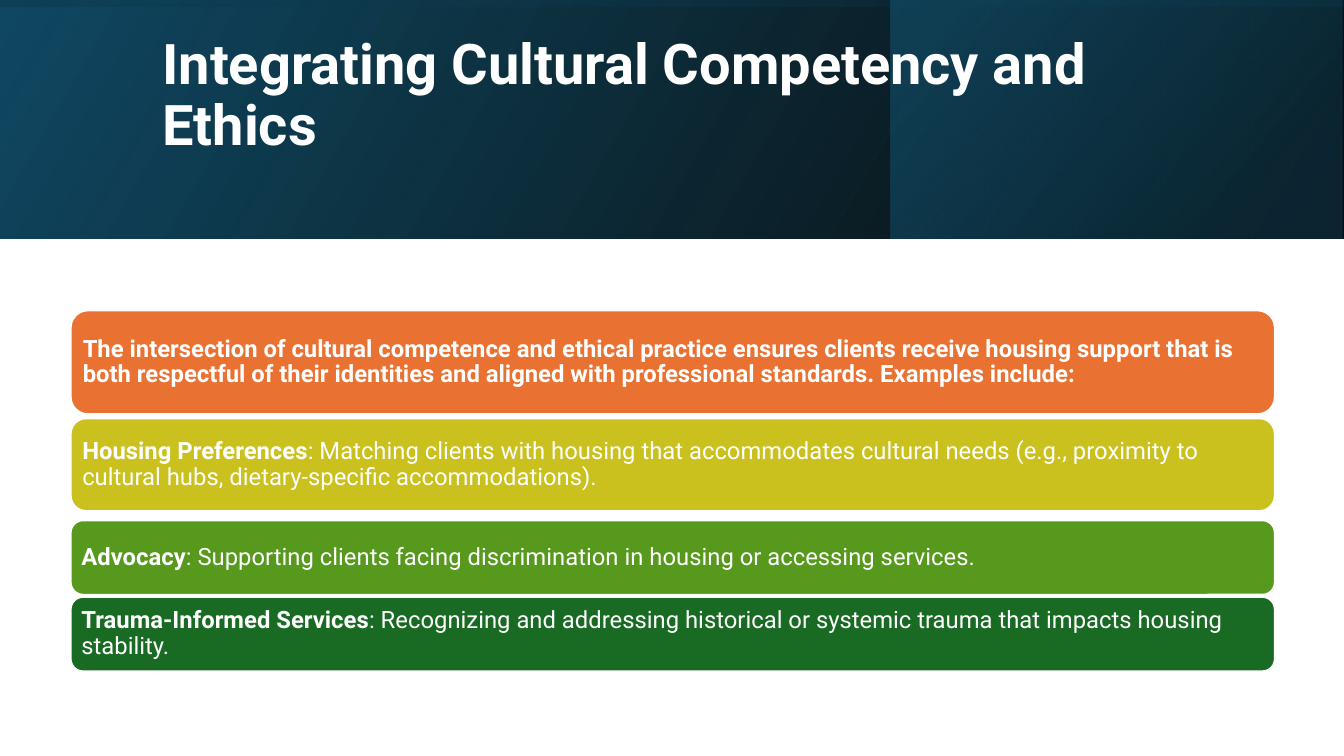
import pptx
import pptx.util
import pptx.dml.color
import pptx.enum.shapes
import pptx.enum.text
import pptx.oxml
import pptx.oxml.ns

COLOURS = {
    "white": "FFFFFF", "black": "000000", "navy": "104862",
    "deep": "0B3041", "teal": "156082", "orange": "E97132",
    "yellow": "CBC11E", "green": "56991D", "forest": "196B24",
}
WIDTH, HEIGHT, BANNER = 33.87, 19.05, 6.02
Cm = pptx.util.Cm


def rgb(name):
    return pptx.dml.color.RGBColor.from_string(COLOURS[name])


class SlideBuilder:
    """Style of the deck and the slide being built."""
    font = "Roboto"
    line_spacing = 0.9

    def __init__(self, deck):
        self.slide = deck.slides.add_slide(deck.slide_layouts[5])

    def shape(self, kind, left, top, width, height):
        shape = self.slide.shapes.add_shape(
            kind, Cm(left), Cm(top), Cm(width), Cm(height))
        shape.shadow.inherit = False
        return shape

    def add_text(self, frame, runs, size):
        frame.word_wrap = True
        para = frame.paragraphs[0]
        para.alignment = pptx.enum.text.PP_ALIGN.LEFT
        para.line_spacing = self.line_spacing
        for text, bold in runs:
            span = para.add_run()
            span.text = text
            span.font.name = self.font
            span.font.size = pptx.util.Pt(size)
            span.font.bold = bold
            span.font.color.rgb = rgb("white")

    def gradient_panel(self, left, top, width, height, angle, stops, rotation=0):
        panel = self.shape(pptx.enum.shapes.MSO_SHAPE.RECTANGLE,
                           left, top, width, height)
        panel.rotation = rotation
        panel.line.fill.background()
        properties = panel._element.spPr
        properties.xfrm.set("flipH", "1")
        # Transparent gradient stops: position, colour, opacity in percent
        stop_xml = "".join(
            f'<a:gs pos="{position * 1000}"><a:srgbClr val="{COLOURS[colour]}">'
            f'<a:alpha val="{opacity * 1000}"/></a:srgbClr></a:gs>'
            for position, colour, opacity in stops)
        gradient = pptx.oxml.parse_xml(
            f'<a:gradFill {pptx.oxml.ns.nsdecls("a")} rotWithShape="1">'
            f'<a:gsLst>{stop_xml}</a:gsLst>'
            f'<a:lin ang="{angle * 60000}" scaled="0"/></a:gradFill>')
        properties.find(pptx.oxml.ns.qn("a:prstGeom")).addnext(gradient)

    def title(self, text, left, top, width, height):
        box = self.slide.shapes.title
        box.left, box.top, box.width, box.height = map(
            Cm, (left, top, width, height))
        frame = box.text_frame
        frame.vertical_anchor = pptx.enum.text.MSO_ANCHOR.TOP
        frame.auto_size = pptx.enum.text.MSO_AUTO_SIZE.NONE
        frame.margin_top = 0
        self.add_text(frame, [(text, True)], 40)
        # Bring the title in front of the banner
        self.slide.shapes._spTree.append(box._element)

    def card(self, top, height, colour, runs):
        box = self.shape(pptx.enum.shapes.MSO_SHAPE.ROUNDED_RECTANGLE,
                         1.78, top, 30.35, height)
        box.fill.solid()
        box.fill.fore_color.rgb = rgb(colour)
        box.line.color.rgb = rgb("white")
        box.line.width = pptx.util.Pt(1.5)
        frame = box.text_frame
        frame.vertical_anchor = pptx.enum.text.MSO_ANCHOR.MIDDLE
        frame.margin_left = frame.margin_right = Cm(0.18)
        frame.margin_top = frame.margin_bottom = Cm(0.18)
        self.add_text(frame, runs, 17)


def main():
    deck = pptx.Presentation()
    deck.slide_width, deck.slide_height = Cm(WIDTH), Cm(HEIGHT)
    builder = SlideBuilder(deck)

    # Banner
    builder.gradient_panel(0, 0, WIDTH, BANNER, 330,
                           [(0, "black", 96), (100, "navy", 100)])
    builder.gradient_panel(22.45, 0, 11.39, BANNER, 320,
                           [(19, "deep", 68), (100, "teal", 48)])
    offset = (WIDTH - BANNER) / 2
    builder.gradient_panel(offset, -offset, BANNER, WIDTH, 350,
                           [(23, "navy", 16), (99, "black", 45)], rotation=270)
    builder.title("Integrating Cultural Competency and Ethics",
                  3.84, 0.92, 27, 4.37)

    # Cards
    cards = [
        (7.82, 2.62, "orange", [
            ("The intersection of cultural competence and ethical practice "
             "ensures clients receive housing support that is both respectful "
             "of their identities and aligned with professional standards. "
             "Examples include:", True)]),
        (10.54, 2.34, "yellow", [
            ("Housing Preferences", True),
            (": Matching clients with housing that accommodates cultural needs "
             "(e.g., proximity to cultural hubs, dietary-specific "
             "accommodations).", False)]),
        (13.11, 1.88, "green", [
            ("Advocacy", True),
            (": Supporting clients facing discrimination in housing or "
             "accessing services.", False)]),
        (15.04, 1.88, "forest", [
            ("Trauma-Informed Services", True),
            (": Recognizing and addressing historical or systemic trauma that "
             "impacts housing stability.", False)]),
    ]
    for top, height, colour, runs in cards:
        builder.card(top, height, colour, runs)

    deck.save("out.pptx")


if __name__ == "__main__":
    main()
